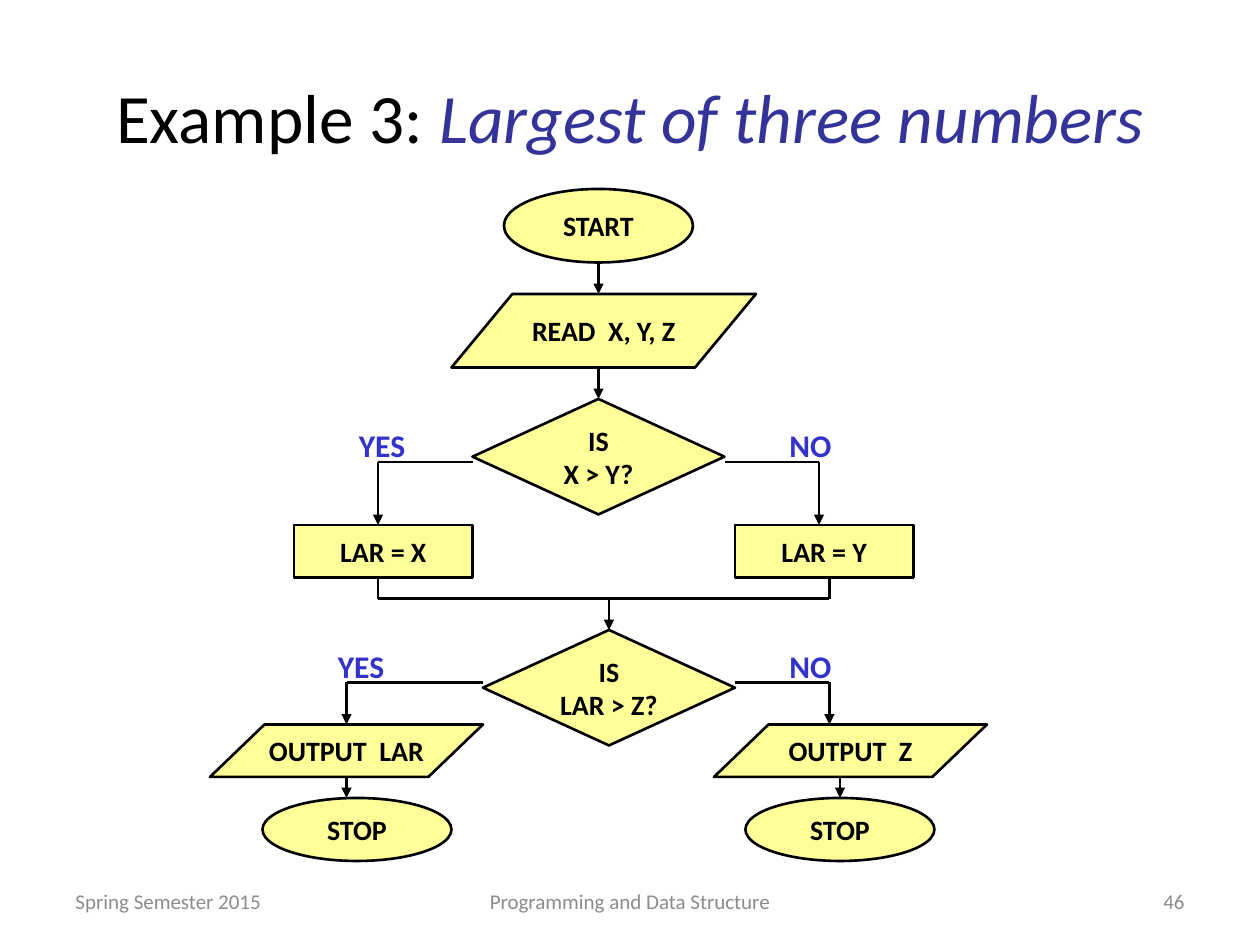
from lxml import etree
from pptx import Presentation
from pptx.dml.color import RGBColor
from pptx.enum.shapes import MSO_CONNECTOR, MSO_SHAPE
from pptx.enum.text import MSO_ANCHOR, PP_ALIGN
from pptx.oxml.ns import qn
from pptx.util import Pt

OVAL = MSO_SHAPE.OVAL
BOX = MSO_SHAPE.RECTANGLE
DATA = MSO_SHAPE.FLOWCHART_DATA
DECISION = MSO_SHAPE.FLOWCHART_DECISION
STRAIGHT = MSO_CONNECTOR.STRAIGHT
LEFT, CENTER, RIGHT = PP_ALIGN.LEFT, PP_ALIGN.CENTER, PP_ALIGN.RIGHT
TOP, MIDDLE = MSO_ANCHOR.TOP, MSO_ANCHOR.MIDDLE

COLORS = {
    "ink": "000000",
    "node": "FFFF99",
    "topic": "333399",
    "branch": "3333CC",
    "footer": "8C8C8C",
}
TOP_SITE = 0


class Flowchart:
    font = "Calibri"
    line_width = Pt(1.5)

    def __init__(self, slide):
        self.slide = slide

    def color(self, name):
        return RGBColor.from_string(COLORS[name])

    def add_run(self, paragraph, text, size, color, bold=False, italic=False):
        run = paragraph.add_run()
        run.text = text
        run.font.name = self.font
        run.font.size = Pt(size)
        run.font.bold = bold
        run.font.italic = italic
        run.font.color.rgb = self.color(color)

    def text(self, left, top, width, height, align=LEFT, anchor=MIDDLE):
        """Add an empty text box and return its paragraph."""
        frame = self.slide.shapes.add_textbox(
            Pt(left), Pt(top), Pt(width), Pt(height)).text_frame
        frame.word_wrap = True
        frame.vertical_anchor = anchor
        paragraph = frame.paragraphs[0]
        paragraph.alignment = align
        return paragraph

    def footer(self, left, width, text, align):
        self.add_run(self.text(left, 500.5, width, 28.75, align), text, 12, "footer")

    def branch_label(self, left, top, text):
        paragraph = self.text(left, top, 84, 29, anchor=TOP)
        self.add_run(paragraph, text, 18, "branch", bold=True)

    def node(self, kind, left, top, width, height, *lines):
        shape = self.slide.shapes.add_shape(
            kind, Pt(left), Pt(top), Pt(width), Pt(height))
        shape.shadow.inherit = False
        shape.fill.solid()
        shape.fill.fore_color.rgb = self.color("node")
        shape.line.color.rgb = self.color("ink")
        shape.line.width = self.line_width
        frame = shape.text_frame
        frame.word_wrap = False
        frame.vertical_anchor = MIDDLE
        for index, line in enumerate(lines):
            paragraph = frame.add_paragraph() if index else frame.paragraphs[0]
            paragraph.alignment = CENTER
            self.add_run(paragraph, line, 16, "ink", bold=True)
        return shape

    def line(self, x1, y1, x2, y2):
        connector = self.slide.shapes.add_connector(
            STRAIGHT, Pt(x1), Pt(y1), Pt(x2), Pt(y2))
        connector.line.color.rgb = self.color("ink")
        connector.line.width = self.line_width
        etree.SubElement(connector._element.spPr, qn("a:effectLst"))
        return connector

    def down_arrow(self, x, y1, y2, target=None):
        """Add a downward arrow, joined to the top of target if given."""
        connector = self.line(x, y1, x, y2)
        outline = connector.line._get_or_add_ln()
        etree.SubElement(outline, qn("a:tailEnd"), type="triangle")
        if target is not None:
            connector.end_connect(target, TOP_SITE)


def main():
    prs = Presentation()
    prs.slide_width, prs.slide_height = Pt(720), Pt(540)
    chart = Flowchart(prs.slides.add_slide(prs.slide_layouts[6]))

    title = chart.text(54, 36, 612, 60, CENTER)
    chart.add_run(title, "Example 3: ", 39.6, "ink")
    chart.add_run(title, "Largest of three numbers", 39.6, "topic", italic=True)

    chart.footer(36, 168, "Spring Semester 2015", LEFT)
    chart.footer(246, 228, "Programming and Data Structure", CENTER)
    chart.footer(516, 168, "46", RIGHT)

    chart.node(OVAL, 288, 108, 108, 42, "START")
    chart.node(DATA, 258, 168, 174, 42, "READ  X, Y, Z")
    compare_z = chart.node(DECISION, 276, 360, 144, 66, "IS", "LAR > Z?")
    compare_xy = chart.node(DECISION, 270, 228, 144, 66, "IS", "X > Y?")
    for left, assignment in ((168, "LAR = X"), (420, "LAR = Y")):
        chart.node(BOX, left, 300, 102, 30, assignment)
    for left, output in ((120, "OUTPUT  LAR"), (408, "OUTPUT  Z")):
        chart.node(DATA, left, 414, 156, 30, output)
    chart.node(OVAL, 150, 456, 108, 36, "STOP")
    stop_z = chart.node(OVAL, 426, 456, 108, 36, "STOP")

    chart.down_arrow(342, 150, 168)
    chart.down_arrow(342, 210, 228, compare_xy)

    # Each branch runs sideways from its decision, then down to the next step.
    for start, turn, y, end in ((414, 468, 264, 300), (270, 216, 264, 300),
                                (420, 474, 390, 414), (276, 198, 390, 414)):
        chart.line(start, y, turn, y)
        chart.down_arrow(turn, y, end)

    # Both assignments merge before the second decision.
    chart.line(216, 342, 474, 342)
    for x in (216, 474):
        chart.line(x, 342, x, 330)
    chart.down_arrow(348, 342, 360, compare_z)

    chart.down_arrow(198, 444, 456)
    chart.down_arrow(480, 444, 456, stop_z)

    for top, yes_left in ((240, 198), (366, 186)):
        chart.branch_label(yes_left, top, "YES")
        chart.branch_label(444, top, "NO")

    prs.save("out.pptx")


if __name__ == "__main__":
    main()
